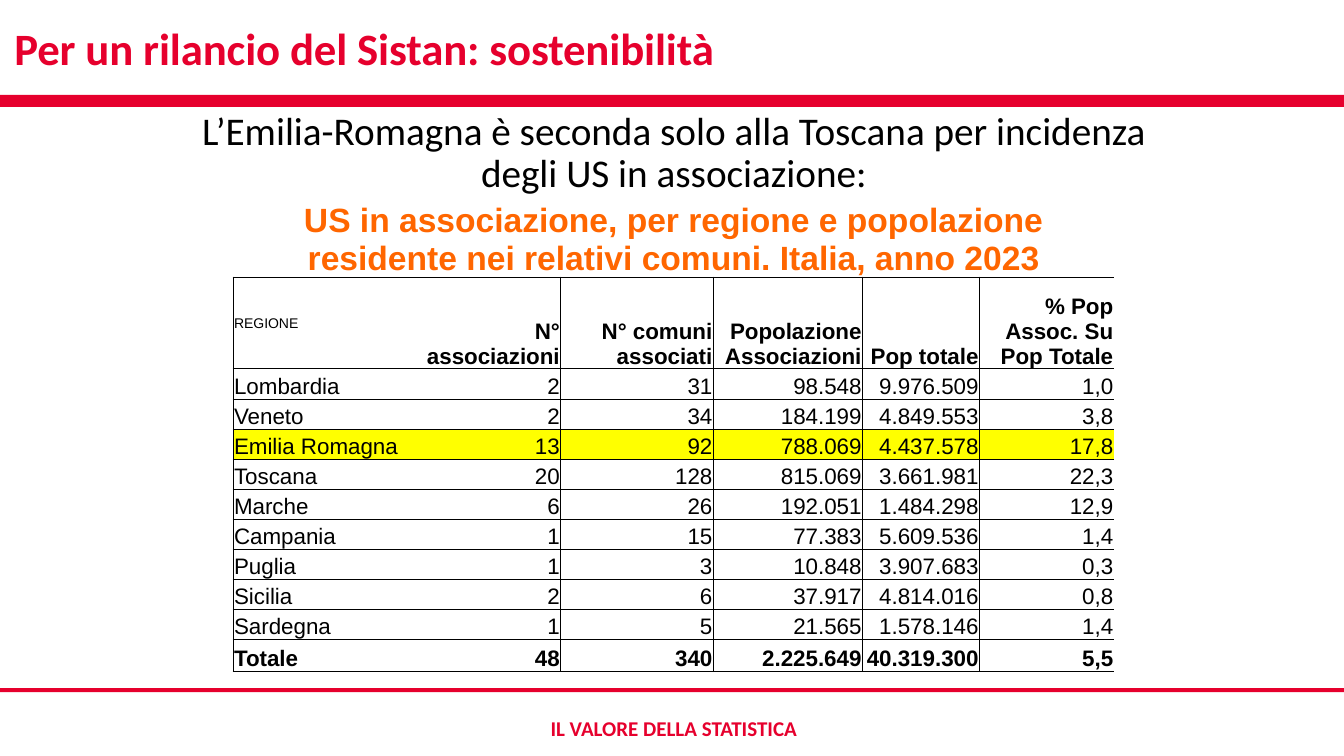
from lxml import etree
from pptx import Presentation
from pptx.dml.color import RGBColor
from pptx.enum.shapes import MSO_SHAPE
from pptx.enum.text import MSO_ANCHOR, MSO_AUTO_SIZE, PP_ALIGN
from pptx.oxml.ns import qn
from pptx.util import Pt

LEFT, CENTER, RIGHT = PP_ALIGN.LEFT, PP_ALIGN.CENTER, PP_ALIGN.RIGHT
TOP, MIDDLE, BOTTOM = MSO_ANCHOR.TOP, MSO_ANCHOR.MIDDLE, MSO_ANCHOR.BOTTOM
RECTANGLE = MSO_SHAPE.RECTANGLE
NO_AUTOFIT = MSO_AUTO_SIZE.NONE

RED, ORANGE, YELLOW = "E6002D", "FF6600", "FFFF00"
BLACK, WHITE = "000000", "FFFFFF"
THIN, THICK = 0.5, 1

TABLE_TITLE = ("US in associazione, per regione e popolazione residente "
               "nei relativi comuni. Italia, anno 2023")
HEADER = ["REGIONE", "N° associazioni", "N° comuni associati",
          "Popolazione Associazioni", "Pop totale", "% Pop Assoc. Su Pop Totale"]
REGIONS = [
    ["Lombardia", "2", "31", "98.548", "9.976.509", "1,0"],
    ["Veneto", "2", "34", "184.199", "4.849.553", "3,8"],
    ["Emilia Romagna", "13", "92", "788.069", "4.437.578", "17,8"],
    ["Toscana", "20", "128", "815.069", "3.661.981", "22,3"],
    ["Marche", "6", "26", "192.051", "1.484.298", "12,9"],
    ["Campania", "1", "15", "77.383", "5.609.536", "1,4"],
    ["Puglia", "1", "3", "10.848", "3.907.683", "0,3"],
    ["Sicilia", "2", "6", "37.917", "4.814.016", "0,8"],
    ["Sardegna", "1", "5", "21.565", "1.578.146", "1,4"],
]
TOTAL = ["Totale", "48", "340", "2.225.649", "40.319.300", "5,5"]
HIGHLIGHTED_REGION = "Emilia Romagna"
COLUMN_WIDTHS = [126, 108, 109, 106.6, 83.6, 96.2]
ROW_HEIGHTS = [61.2, 65.5] + [21.5] * len(REGIONS) + [22.6]


def color(hex_string):
    return RGBColor.from_string(hex_string)


def write(paragraph, text, size=16, font="Arial", fill=BLACK, bold=False,
          align=LEFT, line_spacing=None, tracking=None):
    paragraph.alignment = align
    paragraph.space_before = Pt(0)
    if line_spacing:
        paragraph.line_spacing = line_spacing
    run = paragraph.add_run()
    run.text = text
    run.font.name = font
    run.font.size = Pt(size)
    run.font.bold = bold
    run.font.color.rgb = color(fill)
    if tracking:
        run.font._element.set("spc", str(round(tracking * 100)))


class SlideBuilder:
    font = "Calibri"
    accent = RED

    def __init__(self, presentation):
        self.slide = presentation.slides.add_slide(presentation.slide_layouts[5])

    def bar(self, top, height):
        shape = self.slide.shapes.add_shape(RECTANGLE, 0, Pt(top), Pt(960), Pt(height))
        shape.shadow.inherit = False
        shape.fill.solid()
        shape.fill.fore_color.rgb = color(self.accent)
        shape.line.fill.background()

    def title(self, text, left, top, width, height):
        shape = self.slide.shapes.title
        shape.left, shape.top = Pt(left), Pt(top)
        shape.width, shape.height = Pt(width), Pt(height)
        frame = shape.text_frame
        frame.auto_size = NO_AUTOFIT
        frame.vertical_anchor = MIDDLE
        write(frame.paragraphs[0], text, size=32, font=self.font, fill=self.accent,
              bold=True, tracking=-0.1)

    def text_box(self, text, left, top, width, height, **text_format):
        shape = self.slide.shapes.add_textbox(Pt(left), Pt(top), Pt(width), Pt(height))
        frame = shape.text_frame
        frame.word_wrap = True
        frame.vertical_anchor = TOP
        write(frame.paragraphs[0], text, font=self.font, align=CENTER, **text_format)

    def table(self, left, top, column_widths, row_heights):
        shape = self.slide.shapes.add_table(
            len(row_heights), len(column_widths), Pt(left), Pt(top),
            Pt(sum(column_widths)), Pt(sum(row_heights)))
        table = shape.table
        table.first_row = table.horz_banding = False
        for column, width in zip(table.columns, column_widths):
            column.width = Pt(width)
        for row, height in zip(table.rows, row_heights):
            row.height = Pt(height)
        return table

    def cell(self, cell, text, fill=None, anchor=BOTTOM, borders=None, **text_format):
        cell.margin_left = cell.margin_right = cell.margin_top = Pt(0.7)
        cell.margin_bottom = 0
        cell.vertical_anchor = anchor
        if fill:
            cell.fill.solid()
            cell.fill.fore_color.rgb = color(fill)
        else:
            cell.fill.background()
        self.borders(cell, borders or {})
        if text:
            write(cell.text_frame.paragraphs[0], text, **text_format)

    def borders(self, cell, widths):
        properties = cell._tc.get_or_add_tcPr()
        for index, side in enumerate("LRTB"):
            line = etree.Element(qn(f"a:ln{side}"))
            if side in widths:
                line.set("w", str(Pt(widths[side])))
                solid = etree.SubElement(line, qn("a:solidFill"))
                etree.SubElement(solid, qn("a:srgbClr")).set("val", BLACK)
            else:
                etree.SubElement(line, qn("a:noFill"))
            properties.insert(index, line)


def grid_borders(row, column):
    """Row 0 is the header; the right edge and the first inner line stay open."""
    last_row, last_column = len(REGIONS) + 1, len(HEADER) - 1
    widths = {"T": THICK if row <= 1 else THIN,
              "B": THICK if row in (0, last_row) else THIN}
    if column != 1:
        widths["L"] = THIN if column else THICK
    if 0 < column < last_column:
        widths["R"] = THIN
    return widths


def main():
    presentation = Presentation()
    presentation.slide_width, presentation.slide_height = Pt(960), Pt(540)
    builder = SlideBuilder(presentation)

    # Frame: title, bars and footer
    builder.bar(67.8, 8.6)
    builder.bar(491.5, 3)
    builder.title("Per un rilancio del Sistan: sostenibilità", 3, 3, 945, 62.6)
    builder.text_box("IL VALORE DELLA STATISTICA", 203.8, 507.6, 555, 25.2,
                     size=15, fill=RED, bold=True)

    # Lead sentence
    builder.text_box("L’Emilia-Romagna è seconda solo alla Toscana per incidenza "
                     "degli US in associazione:", 122.4, 76.3, 717.8, 416,
                     size=28, line_spacing=0.9)

    # Table title, across all columns
    table = builder.table(166.5, 136.8, COLUMN_WIDTHS, ROW_HEIGHTS)
    last_column = len(HEADER) - 1
    for column in range(len(HEADER)):
        builder.cell(table.cell(0, column), TABLE_TITLE if column == 0 else "",
                     borders={"B": THICK}, size=24, fill=None, bold=True,
                     align=CENTER) if column else None
    table.cell(0, 0).merge(table.cell(0, last_column))
    builder.cell(table.cell(0, 0), "", borders={"B": THICK})
    write(table.cell(0, 0).text_frame.paragraphs[0], TABLE_TITLE, size=24,
          fill=ORANGE, bold=True, align=CENTER)

    # Header, regions and total
    for row, values in enumerate([HEADER, *REGIONS, TOTAL]):
        is_header, is_total = values is HEADER, values is TOTAL
        for column, value in enumerate(values):
            is_corner = is_header and column == 0
            if values[0] == HIGHLIGHTED_REGION:
                fill = YELLOW
            else:
                fill = None if is_header or (is_total and column < 3) else WHITE
            builder.cell(table.cell(row + 1, column), value, fill=fill,
                         anchor=MIDDLE if is_corner else BOTTOM,
                         borders=grid_borders(row, column),
                         size=10 if is_corner else 16,
                         bold=(is_header or is_total) and not is_corner,
                         align=RIGHT if column else LEFT)

    presentation.save("out.pptx")


if __name__ == "__main__":
    main()
